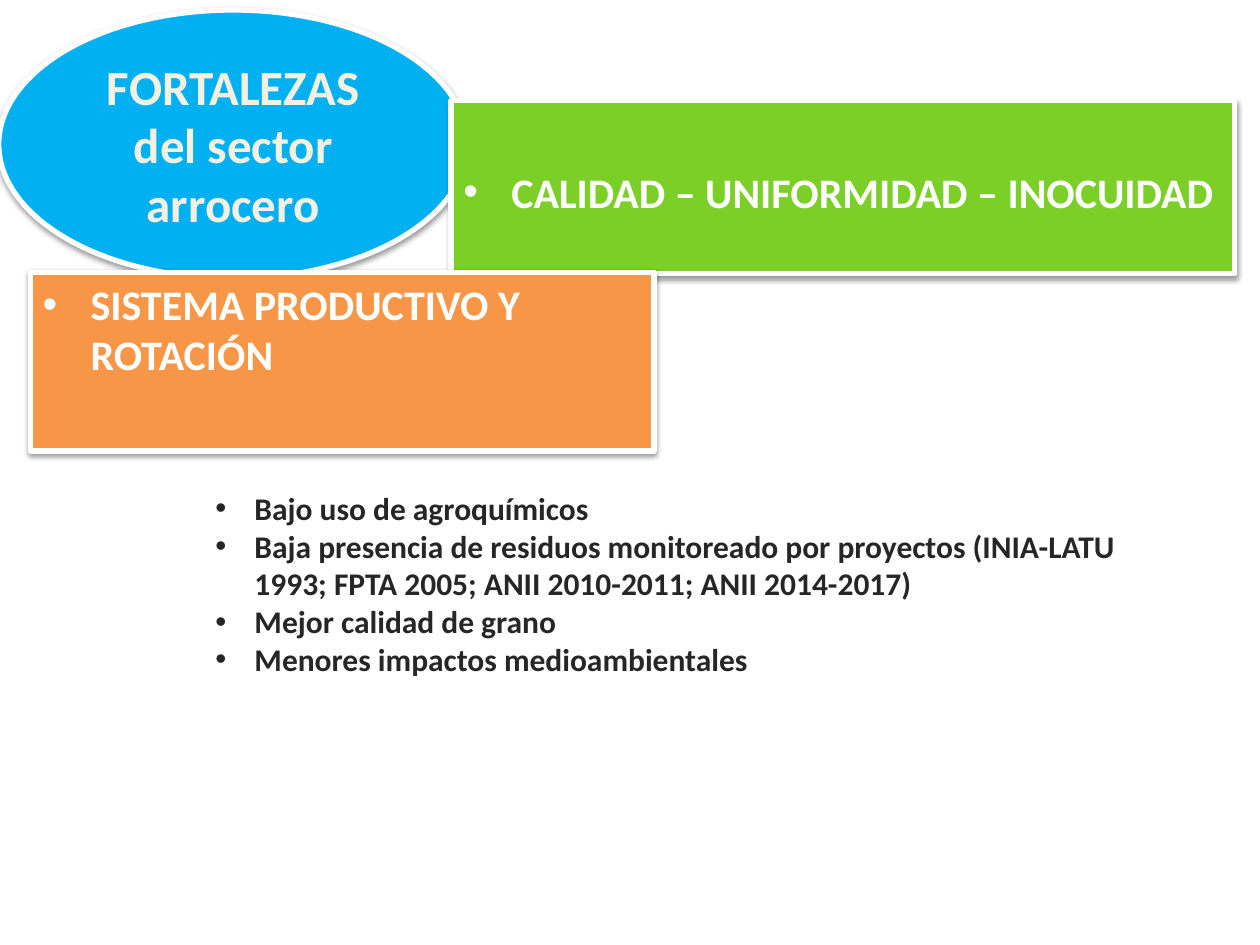
from lxml import etree
from pptx import Presentation
from pptx.dml.color import RGBColor
from pptx.enum.shapes import MSO_SHAPE
from pptx.enum.text import MSO_ANCHOR, MSO_AUTO_SIZE, PP_ALIGN
from pptx.oxml.ns import qn
from pptx.util import Inches, Pt

OVAL, RECTANGLE = MSO_SHAPE.OVAL, MSO_SHAPE.RECTANGLE
TOP, MIDDLE = MSO_ANCHOR.TOP, MSO_ANCHOR.MIDDLE
LEFT, CENTER = PP_ALIGN.LEFT, PP_ALIGN.CENTER
NO_FIT, GROW = MSO_AUTO_SIZE.NONE, MSO_AUTO_SIZE.SHAPE_TO_FIT_TEXT

TITLE = ["FORTALEZAS", "del sector arrocero"]
TITLE_BOX = (-0.01, 0.08, 3.72, 2.13)
TITLE_FILL = "00B0F0"
TITLE_MARGIN = 0.64  # keeps the title inside the oval

# text, (left, top, width, height), fill, top margin
BANNERS = [
    ("CALIDAD – UNIFORMIDAD – INOCUIDAD", (3.58, 0.8, 6.22, 1.37), "7BCF27", 0.52),
    ("SISTEMA PRODUCTIVO Y ROTACIÓN", (0.24, 2.16, 4.95, 1.42), "F79646", 0.05),
]

BENEFITS = [
    "Bajo uso de agroquímicos",
    "Baja presencia de residuos monitoreado por proyectos "
    "(INIA-LATU 1993; FPTA 2005; ANII 2010-2011; ANII 2014-2017)",
    "Mejor calidad de grano",
    "Menores impactos medioambientales",
]
BENEFITS_BOX = (1.61, 3.83, 7.56, 1.62)


def color(hex_string):
    return RGBColor.from_string(hex_string)


def place(shape, box):
    for name, value in zip(("left", "top", "width", "height"), box):
        setattr(shape, name, Inches(value))


def add_shadow(shape):
    """Give the shape a soft shadow straight below it."""
    shape.shadow.inherit = False
    effects = shape._element.spPr.find(qn("a:effectLst"))
    shadow = etree.SubElement(
        effects, qn("a:outerShdw"), blurRad=str(Pt(3.1)), dist=str(Pt(1.6)),
        dir="5400000", rotWithShape="0")
    black = etree.SubElement(shadow, qn("a:srgbClr"), val="000000")
    etree.SubElement(black, qn("a:alpha"), val="38000")


def add_panel(slide, kind, box, fill):
    panel = slide.shapes.add_shape(kind, *map(Inches, box))
    panel.fill.solid()
    panel.fill.fore_color.rgb = color(fill)
    panel.line.color.rgb = color("FFFFFF")
    panel.line.width = Pt(3)
    add_shadow(panel)
    return panel


def add_bullet(paragraph, indent):
    properties = paragraph._p.get_or_add_pPr()
    properties.set("marL", str(Inches(indent)))
    properties.set("indent", str(-Inches(indent)))
    etree.SubElement(properties, qn("a:buFont"), typeface="Arial")
    etree.SubElement(properties, qn("a:buChar"), char="•")


def write(shape, lines, size, text_color, frame_format, align=LEFT, indent=0):
    frame = shape.text_frame
    for name, value in {"word_wrap": True, **frame_format}.items():
        setattr(frame, name, value)
    for index, line in enumerate(lines):
        paragraph = frame.add_paragraph() if index else frame.paragraphs[0]
        paragraph.alignment = align
        paragraph.space_before = Pt(0)
        if indent:
            add_bullet(paragraph, indent)
        run = paragraph.add_run()
        run.text = line
        font_format = {"name": "Calibri", "size": Pt(size), "bold": True}
        for name, value in font_format.items():
            setattr(run.font, name, value)
        run.font.color.rgb = color(text_color)


def main():
    presentation = Presentation()
    presentation.slide_width, presentation.slide_height = Inches(10), Inches(7.5)
    slide = presentation.slides.add_slide(presentation.slide_layouts[1])
    title, benefits = slide.placeholders

    oval = add_panel(slide, OVAL, TITLE_BOX, TITLE_FILL)
    title._element.addprevious(oval._element)
    place(title, TITLE_BOX)
    margin = Inches(TITLE_MARGIN)
    write(title, TITLE, 28, "F4F1E3",
          {"vertical_anchor": MIDDLE, "auto_size": NO_FIT,
           "margin_left": margin, "margin_right": margin}, align=CENTER)

    for text, box, fill, top_margin in BANNERS:
        banner = add_panel(slide, RECTANGLE, box, fill)
        write(banner, [text], 24, "FFFFFF",
              {"vertical_anchor": TOP, "margin_top": Inches(top_margin)}, indent=0.38)

    place(benefits, BENEFITS_BOX)
    write(benefits, BENEFITS, 18, "262626",
          {"vertical_anchor": TOP, "auto_size": GROW}, indent=0.31)

    presentation.save("out.pptx")


if __name__ == "__main__":
    main()
